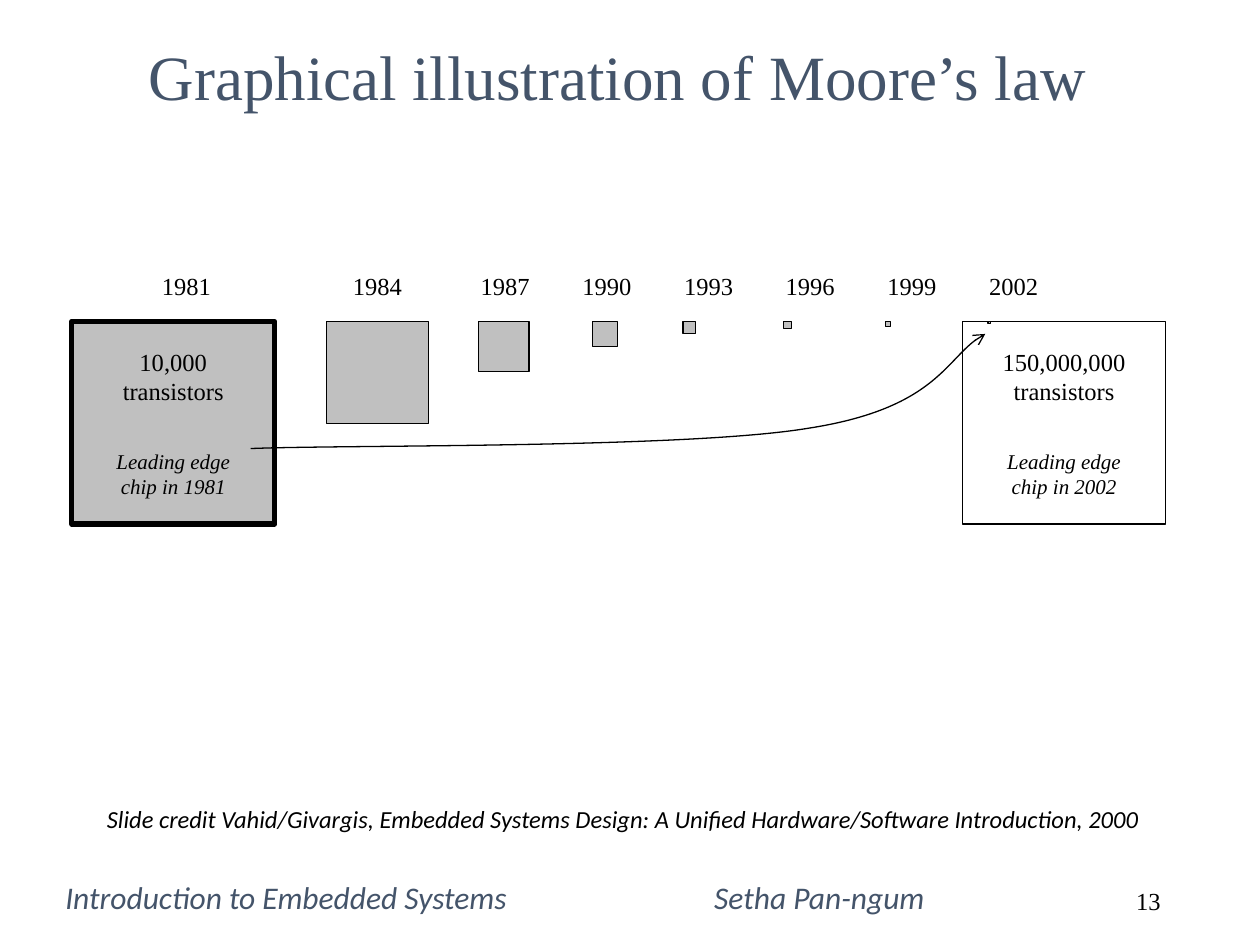
from lxml import etree
from pptx import Presentation
from pptx.dml.color import RGBColor
from pptx.enum.shapes import MSO_SHAPE
from pptx.enum.text import MSO_ANCHOR, MSO_AUTO_SIZE, PP_ALIGN
from pptx.oxml.ns import qn
from pptx.util import Inches, Pt

RECTANGLE = MSO_SHAPE.RECTANGLE
TOP, MIDDLE = MSO_ANCHOR.TOP, MSO_ANCHOR.MIDDLE
LEFT, CENTER, RIGHT = PP_ALIGN.LEFT, PP_ALIGN.CENTER, PP_ALIGN.RIGHT
SERIF, SANS = "Times New Roman", "Calibri"
BLACK, SLATE, GRAY = "000000", "44546A", "C0C0C0"
CHIP_TOP, CHIP_SIZE, LAST_LEFT = 2.55, 1.61, 7.64


def put_text(text, place, box=None, size=14, font=SERIF, color=BLACK,
             italic=False, align=CENTER, anchor=TOP, inset=(0, 0)):
    if box is None:
        box = page.shapes.add_textbox(0, 0, 0, 0)
    box.left, box.top, box.width, box.height = [Inches(v) for v in place]
    frame = box.text_frame
    frame.word_wrap = True
    frame.auto_size = MSO_AUTO_SIZE.NONE
    frame.vertical_anchor = anchor
    frame.margin_left = frame.margin_right = Inches(inset[0])
    frame.margin_top = frame.margin_bottom = Inches(inset[1])
    frame.text = text
    for para in frame.paragraphs:
        para.alignment = align
        for span in para.runs:
            span.font.name = font
            span.font.size = Pt(size)
            span.font.italic = italic
            span.font.bold = False
            span.font.color.rgb = RGBColor.from_string(color)
    return box


def style(shape, fill=None, width=0.75):
    shape.shadow.inherit = False
    if fill:
        shape.fill.solid()
        shape.fill.fore_color.rgb = RGBColor.from_string(fill)
    else:
        shape.fill.background()
    shape.line.color.rgb = RGBColor.from_string(BLACK)
    shape.line.width = Pt(width)


deck = Presentation()
deck.slide_width, deck.slide_height = Inches(10), Inches(7.5)
page = deck.slides.add_slide(deck.slide_layouts[5])

put_text("Graphical illustration of Moore’s law", (1.08, 0.25, 8.17, 1.26),
         box=page.shapes.title, size=36, color=SLATE, align=LEFT, inset=(0.1, 0.05))
put_text("13", (7.06, 6.95, 2.25, 0.4), align=RIGHT, anchor=MIDDLE, inset=(0.1, 0.05))
put_text("Slide credit Vahid/Givargis, Embedded Systems Design: "
         "A Unified Hardware/Software Introduction, 2000", (0.75, 6.33, 8.5, 0.33),
         font=SANS, italic=True, align=LEFT, inset=(0.1, 0.05))
footer = put_text("Introduction to Embedded Systems\tSetha Pan-ngum", (0.42, 6.92, 9.08, 0.42),
                  size=18, font=SANS, color=SLATE, italic=True, align=LEFT, inset=(0.1, 0.05))
footer_format = footer.text_frame.paragraphs[0]._p.get_or_add_pPr()
tab_list = etree.SubElement(footer_format, qn("a:tabLst"))
etree.SubElement(tab_list, qn("a:tab"), pos=str(Inches(5.15)), algn="l")

chips = [(0.57, CHIP_SIZE), (2.59, 0.81), (3.8, 0.4), (4.7, 0.2),
         (5.42, 0.1), (6.22, 0.06), (7.03, 0.04), (7.84, 0.02)]
for index, (left, size) in enumerate(chips):
    chip = page.shapes.add_shape(RECTANGLE, Inches(left), Inches(CHIP_TOP),
                                 Inches(size), Inches(size))
    style(chip, fill=GRAY, width=3 if index == 0 else 0.75)
    label_left, label_width = (1.18, 0.6) if index == 0 else (1.98 + 0.81 * index, 0.81)
    if index == 1:
        label_left = left
    else:
        label_left = label_left if index == 0 else LAST_LEFT - 0.807 * (7 - index)
    put_text(str(1981 + 3 * index), (label_left, 2.15, label_width, 0.4))

last_chip = page.shapes.add_shape(RECTANGLE, Inches(LAST_LEFT), Inches(CHIP_TOP),
                                  Inches(CHIP_SIZE), Inches(CHIP_SIZE))
style(last_chip)
for left, count, year in [(0.57, "10,000", 1981), (LAST_LEFT, "150,000,000", 2002)]:
    put_text(f"{count}\ntransistors", (left, 2.75, CHIP_SIZE, 0.61))
    put_text(f"Leading edge\nchip in {year}", (left, 3.56, CHIP_SIZE, 0.61),
             size=12, italic=True)

curve_points = [(2.72, 3.53), (5.44, 3.56), (6.41, 3.4),
                (7.39, 3.25), (7.53, 2.8), (7.82, 2.65)]
builder = page.shapes.build_freeform(Inches(1.99), Inches(3.56))
builder.add_line_segments([(Inches(x), Inches(y)) for x, y in curve_points], close=False)
arrow = builder.convert_to_shape()
style(arrow)
segments = list(arrow._element.iter(qn("a:lnTo")))
outline = segments[0].getparent()
for start in range(0, len(segments), 3):
    bend = etree.SubElement(outline, qn("a:cubicBezTo"))
    for segment in segments[start:start + 3]:
        bend.append(segment[0])
        outline.remove(segment)
etree.SubElement(arrow.line._get_or_add_ln(), qn("a:tailEnd"), type="arrow")

deck.save("out.pptx")
